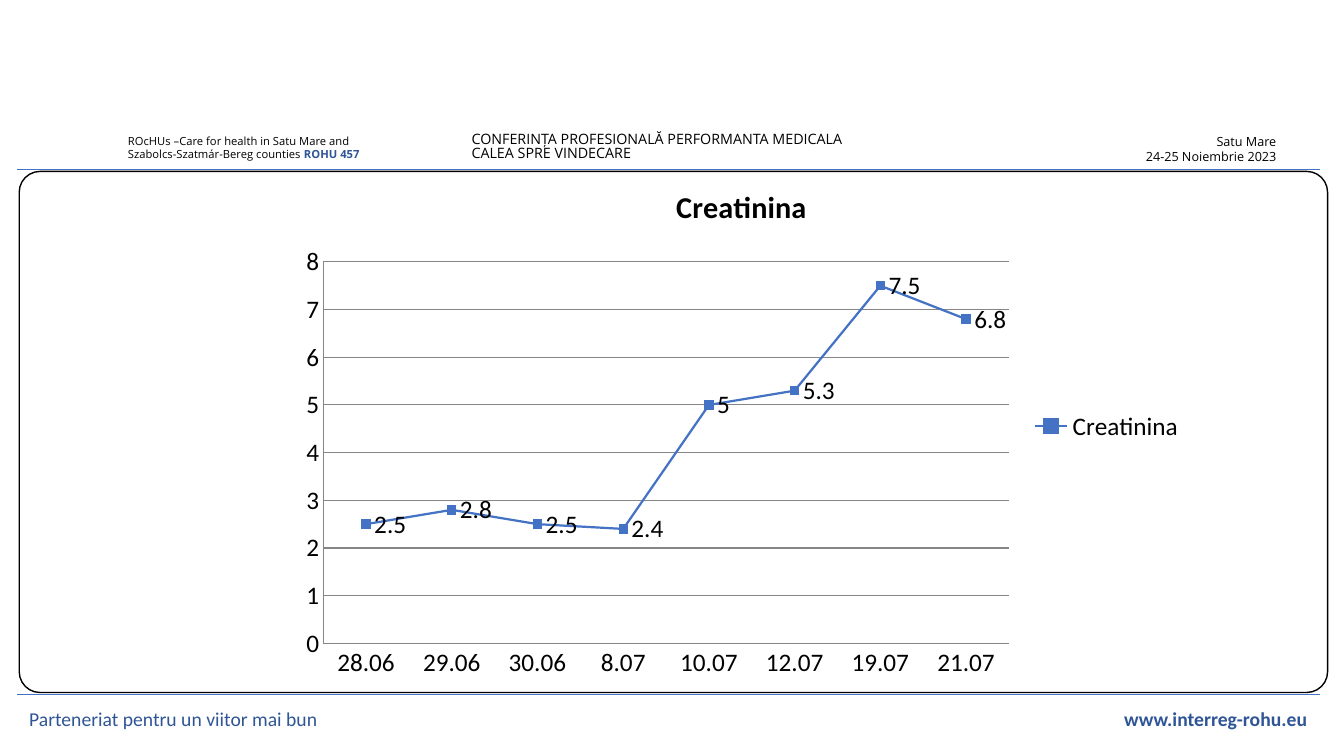
from dataclasses import dataclass

import lxml.etree
import pptx
import pptx.chart.chart
import pptx.chart.data
import pptx.dml.color
import pptx.enum.chart
import pptx.enum.dml
import pptx.enum.shapes
import pptx.enum.text
import pptx.oxml
import pptx.oxml.ns
import pptx.slide
import pptx.util

BLACK = pptx.dml.color.RGBColor(0x00, 0x00, 0x00)
GRID_GREY = pptx.dml.color.RGBColor(0x86, 0x86, 0x86)
BLUE = pptx.dml.color.RGBColor(0x44, 0x72, 0xC4)
NAVY = pptx.dml.color.RGBColor(0x2F, 0x55, 0x97)

ALIGN = pptx.enum.text.PP_ALIGN
ANCHOR = pptx.enum.text.MSO_ANCHOR
SLIDE_WIDTH = pptx.util.Inches(13.33)
SLIDE_HEIGHT = pptx.util.Inches(7.5)


@dataclass(frozen=True)
class Box:
    """A rectangle in percent of the slide's width and height."""
    left: float
    top: float
    width: float
    height: float

    def lengths(self) -> tuple[int, int, int, int]:
        return (across(self.left), down(self.top), across(self.width), down(self.height))


@dataclass(frozen=True)
class Run:
    text: str
    bold: bool = False
    color: pptx.dml.color.RGBColor = BLACK


@dataclass(frozen=True)
class TextBlock:
    box: Box
    lines: tuple[tuple[Run, ...], ...]
    size: float
    font: str = "Open Sans"
    alignment: ALIGN = ALIGN.LEFT
    anchor: ANCHOR = ANCHOR.TOP
    line_spacing: float = 1.0
    right_tab: float | None = None


def across(percent: float) -> int:
    return round(SLIDE_WIDTH * percent / 100)


def down(percent: float) -> int:
    return round(SLIDE_HEIGHT * percent / 100)


TEXT_BLOCKS = (
    TextBlock(
        Box(34.35, 17.07, 42.75, 5.33),
        ((Run("CONFERINȚA PROFESIONALĂ PERFORMANTA MEDICALA"),),
         (Run("CALEA SPRE VINDECARE"),)),
        size=10.2, line_spacing=0.8,
    ),
    TextBlock(
        Box(79.05, 17.07, 16.65, 5.33),
        ((Run("Satu Mare"),), (Run("24-25 Noiembrie 2023"),)),
        size=9, alignment=ALIGN.RIGHT,
    ),
    TextBlock(
        Box(8.78, 17.07, 25.5, 4.93),
        ((Run("ROcHUs –Care for health in Satu Mare and"),),
         (Run("Szabolcs-Szatmár-Bereg counties "), Run("ROHU 457", True, NAVY))),
        size=8,
    ),
    TextBlock(
        Box(1.43, 92.4, 96.83, 5.33),
        ((Run("Parteneriat pentru un viitor mai bun\t", color=NAVY),
          Run("www.interreg-rohu.eu", True, NAVY)),),
        size=14, font="Calibri", anchor=ANCHOR.MIDDLE, right_tab=95.1,
    ),
)
RULE_LEFT, RULE_RIGHT = 1.28, 98.25
RULE_TOPS = (22.4, 91.87)
FRAME_BOX = Box(1.43, 22.67, 97.35, 68.93)
CHART_BOX = Box(21.45, 21.73, 67.43, 69.33)
CREATININE = {
    "28.06": 2.5, "29.06": 2.8, "30.06": 2.5, "8.07": 2.4,
    "10.07": 5, "12.07": 5.3, "19.07": 7.5, "21.07": 6.8,
}


def apply_format(target: object, values: dict[str, object]) -> None:
    for name, value in values.items():
        setattr(target, name, value)


def set_line(line: object, color: pptx.dml.color.RGBColor, width: float) -> None:
    line.color.rgb = color
    line.width = pptx.util.Pt(width)


def add_text(slide: pptx.slide.Slide, block: TextBlock) -> None:
    frame = slide.shapes.add_textbox(*block.box.lengths()).text_frame
    apply_format(frame, {"word_wrap": True, "vertical_anchor": block.anchor})
    for index, line in enumerate(block.lines):
        paragraph = frame.add_paragraph() if index else frame.paragraphs[0]
        apply_format(paragraph, {"alignment": block.alignment,
                                 "line_spacing": block.line_spacing})
        if block.right_tab is not None:
            tabs = pptx.oxml.parse_xml(
                f'<a:tabLst {pptx.oxml.ns.nsdecls("a")}>'
                f'<a:tab pos="{across(block.right_tab)}" algn="r"/></a:tabLst>')
            paragraph._p.get_or_add_pPr().append(tabs)
        for part in line:
            run = paragraph.add_run()
            run.text = part.text
            apply_format(run.font, {"name": block.font, "bold": part.bold,
                                    "size": pptx.util.Pt(block.size)})
            run.font.color.rgb = part.color


def add_rule(slide: pptx.slide.Slide, top: float) -> None:
    rule = slide.shapes.add_connector(
        pptx.enum.shapes.MSO_CONNECTOR.STRAIGHT,
        across(RULE_LEFT), down(top), across(RULE_RIGHT), down(top))
    set_line(rule.line, BLUE, 0.5)
    lxml.etree.SubElement(rule._element.spPr, pptx.oxml.ns.qn("a:effectLst"))


def add_frame(slide: pptx.slide.Slide) -> None:
    frame = slide.shapes.add_shape(
        pptx.enum.shapes.MSO_SHAPE.ROUNDED_RECTANGLE, *FRAME_BOX.lengths())
    frame.adjustments[0] = 0.04
    frame.shadow.inherit = False
    frame.fill.background()
    set_line(frame.line, BLACK, 1)


def format_axes(chart: pptx.chart.chart.Chart) -> None:
    no_tick = pptx.enum.chart.XL_TICK_MARK.NONE
    for axis in (chart.category_axis, chart.value_axis):
        apply_format(axis, {"major_tick_mark": no_tick, "minor_tick_mark": no_tick})
        set_line(axis.format.line, GRID_GREY, 0.75)
    apply_format(chart.value_axis, {"minimum_scale": 0, "maximum_scale": 8,
                                    "major_unit": 1, "has_major_gridlines": True})
    set_line(chart.value_axis.major_gridlines.format.line, GRID_GREY, 0.75)


def add_creatinine_chart(slide: pptx.slide.Slide) -> None:
    data = pptx.chart.data.CategoryChartData()
    data.categories = list(CREATININE)
    data.add_series("Creatinina", list(CREATININE.values()))
    chart = slide.shapes.add_chart(
        pptx.enum.chart.XL_CHART_TYPE.LINE_MARKERS_STACKED,
        *CHART_BOX.lengths(), data).chart
    apply_format(chart.font, {"name": "Calibri", "size": pptx.util.Pt(18)})
    chart.font.color.rgb = BLACK
    format_axes(chart)

    # Title and legend
    chart.has_title = True
    chart.chart_title.include_in_layout = False
    title = chart.chart_title.text_frame
    title.text = "Creatinina"
    title_font = title.paragraphs[0].runs[0].font
    apply_format(title_font, {"name": "Calibri", "size": pptx.util.Pt(21.6), "bold": True})
    title_font.color.rgb = BLACK
    chart.has_legend = True
    apply_format(chart.legend, {"position": pptx.enum.chart.XL_LEGEND_POSITION.RIGHT,
                                "include_in_layout": False})

    # Series, markers and value labels
    plot = chart.plots[0]
    plot.vary_by_categories = False
    series = plot.series[0]
    series.smooth = False
    set_line(series.format.line, BLUE, 1.6)
    apply_format(series.marker, {"style": pptx.enum.chart.XL_MARKER_STYLE.SQUARE, "size": 6})
    series.marker.format.fill.solid()
    series.marker.format.fill.fore_color.rgb = BLUE
    series.marker.format.line.color.rgb = BLUE
    apply_format(series.data_labels, {
        "show_value": True, "position": pptx.enum.chart.XL_LABEL_POSITION.RIGHT})


def main() -> None:
    presentation = pptx.Presentation()
    apply_format(presentation, {"slide_width": SLIDE_WIDTH, "slide_height": SLIDE_HEIGHT})
    slide = presentation.slides.add_slide(presentation.slide_layouts[6])
    for block in TEXT_BLOCKS:
        add_text(slide, block)
    for top in RULE_TOPS:
        add_rule(slide, top)
    add_frame(slide)
    add_creatinine_chart(slide)
    presentation.save("out.pptx")


if __name__ == "__main__":
    main()
